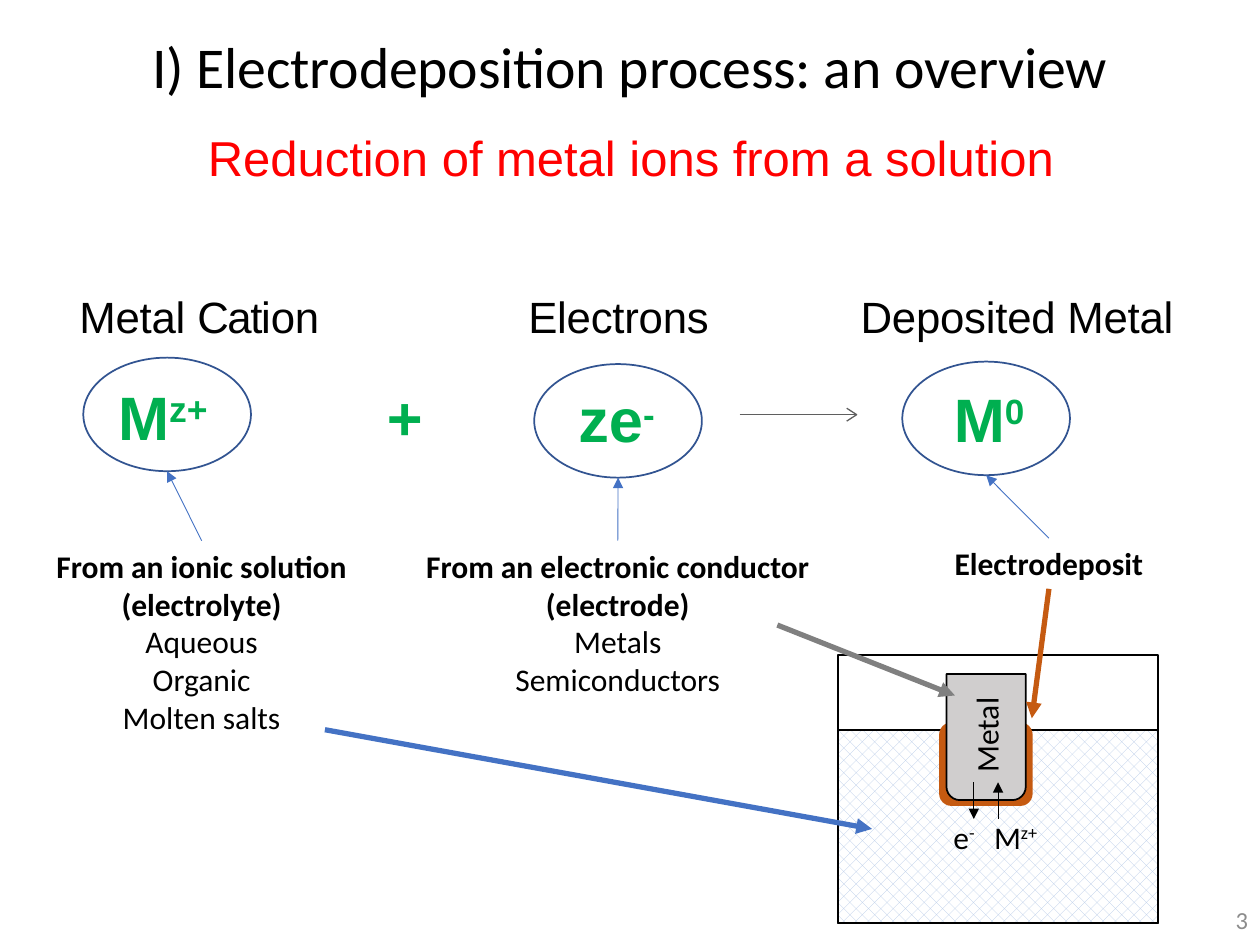
from lxml import etree
from pptx import Presentation
from pptx import util as u
from pptx.dml.color import RGBColor
from pptx.enum import dml, shapes, text
from pptx.oxml.ns import qn

BLACK, GREEN, BLUE, RUST = "000000", "00AF50", "4472C4", "C55A11"
MID = text.MSO_ANCHOR.MIDDLE
LEFT, CENTER, RIGHT = text.PP_ALIGN.LEFT, text.PP_ALIGN.CENTER, text.PP_ALIGN.RIGHT
KIND = shapes.MSO_SHAPE
FLUSH = dict(margin_left=0, margin_right=0, margin_top=u.Cm(0.03), margin_bottom=0,
             auto_size=text.MSO_AUTO_SIZE.SHAPE_TO_FIT_TEXT)
GROW = dict(auto_size=text.MSO_AUTO_SIZE.SHAPE_TO_FIT_TEXT)
HEAD = dict(size=25, name="Arial")
BODY = dict(size=18, name="Calibri")
BOLD = dict(BODY, bold=True)
ION = dict(size=35, name="Arial", color=GREEN, bold=True)


def paint(fmt, color):
    fmt.rgb = RGBColor.from_string(color)


def put(obj, vals):
    for key, val in vals.items():
        setattr(obj, key, val)


def add_run(para, words, size, name, color=BLACK, bold=False, base=0, spc=0):
    run = para.add_run()
    run.text = words
    put(run.font, dict(size=u.Pt(size), name=name, bold=bold))
    paint(run.font.color, color)
    props = run.font._element
    for key, val in (("baseline", base * 1000), ("spc", round(spc * 100))):
        if val:
            props.set(key, str(val))


def fill_para(para, runs, align=LEFT, gap=0, indent=0, tab=None):
    put(para, dict(alignment=align, space_before=u.Pt(gap)))
    props = para._p.get_or_add_pPr()
    props.set("marL", str(u.Cm(indent)))
    if tab:
        tabs = etree.SubElement(props, qn("a:tabLst"))
        etree.SubElement(tabs, qn("a:tab"), pos=str(u.Cm(tab)), algn="l")
    for words, style in runs:
        add_run(para, words, **style)


def add_text(slide, box, paras, frame=GROW, **fmt):
    shape = slide.shapes.add_textbox(*map(u.Cm, box))
    body = shape.text_frame
    put(body, dict(frame, word_wrap=True))
    for i, runs in enumerate(paras):
        para = body.add_paragraph() if i else body.paragraphs[0]
        fill_para(para, runs, **fmt)
    return shape


def add_form(slide, kind, box, fill, line, adj=()):
    shape = slide.shapes.add_shape(kind, *map(u.Cm, box))
    shape.shadow.inherit = False
    for i, val in enumerate(adj):
        shape.adjustments[i] = val
    if fill:
        shape.fill.solid()
        paint(shape.fill.fore_color, fill)
    else:
        shape.fill.background()
    paint(shape.line.color, line)
    shape.line.width = u.Pt(1)
    return shape


def add_arrow(slide, start, end, color, width, source=None, site=0):
    arrow = slide.shapes.add_connector(shapes.MSO_CONNECTOR.STRAIGHT, *map(u.Cm, start + end))
    if source is not None:
        arrow.begin_connect(source, site)
    paint(arrow.line.color, color)
    arrow.line.width = u.Pt(width)
    etree.SubElement(arrow.line._get_or_add_ln(), qn("a:tailEnd"), type="triangle")
    etree.SubElement(arrow._element.spPr, qn("a:effectLst"))


def add_yield(slide):
    left, mid, tip = u.Cm(14.91), u.Cm(8.36), u.Cm(17.27)
    back, half = u.Cm(0.2), u.Cm(0.13)
    pen = slide.shapes.build_freeform(left, mid)
    pen.add_line_segments([(tip, mid)], close=False)
    pen.move_to(tip - back, mid - half)
    pen.add_line_segments([(tip, mid), (tip - back, mid + half)], close=False)
    shape = pen.convert_to_shape()
    shape.shadow.inherit = False
    shape.fill.background()
    paint(shape.line.color, "5F5F5F")
    shape.line.width = u.Pt(0.75)


def add_titles(slide):
    title = dict(size=33, name="Calibri", spc=-0.1)
    red = dict(size=28, name="Arial", color="FF0000")
    add_text(slide, (2.54, 0.58, 20.32, 1.45),
             [[("I) Electrodeposition process: an overview", title)]],
             dict(FLUSH, vertical_anchor=MID), align=CENTER, gap=1)
    add_text(slide, (3.61, 2.54, 18.21, 1.22),
             [[("Reduction of metal ions from a solution", red)]],
             FLUSH, align=CENTER, gap=0.9)
    add_text(slide, (19.69, 18.03, 5.72, 1.02),
             [[("3", dict(size=14, name="Calibri", color="8C8C8C"))]],
             dict(vertical_anchor=MID), align=RIGHT)


def add_terms(slide):
    cation = add_text(slide, (1.57, 5.28, 7.04, 3.89), [[
        ("Metal ", dict(HEAD, spc=-0.1)), ("Cati", dict(HEAD, spc=-0.8)),
        ("on", dict(HEAD, spc=-0.1))]],
        dict(FLUSH, margin_top=u.Cm(0.56)), gap=16.1, indent=0.03)
    fill_para(cation.text_frame.add_paragraph(),
              [("M", ION), ("z+", dict(ION, base=30)), ("\t+", ION)],
              gap=21.3, indent=0.81, tab=6.27)
    for left, wide, words in ((10.62, 3.76, "Electrons"), (17.32, 6.43, "Deposited Metal")):
        add_text(slide, (left, 5.82, wide, 1.12), [[(words, dict(HEAD, spc=-0.1))]],
                 FLUSH, gap=0.9, indent=0.03)
    for left, wide, main_sym, high, base in ((11.56, 1.93, "ze", "-", 25),
                                             (19.13, 1.7, "M", "0", 30)):
        add_text(slide, (left, 7.65, wide, 1.55),
                 [[(main_sym, ION), (high, dict(ION, size=34.5, base=base))]],
                 FLUSH, gap=1.1, indent=0.1)
    add_yield(slide)


def add_notes(slide):
    wide, high = 3.38, 2.29
    rows = (
        ((1.68, 7.21), (0.84, 10.9, 6.45, 4.11), "From an ionic solution (electrolyte)",
         ("Aqueous", "Organic", "Molten salts")),
        ((10.77, 7.34), (8.2, 10.9, 8.51, 3.33), "From an electronic conductor (electrode)",
         ("Metals", "Semiconductors")),
        ((18.19, 7.29), (16.89, 10.85, 8.51, 1.02), "Electrodeposit", ()),
    )
    for (left, top), box, lead, items in rows:
        add_form(slide, KIND.OVAL, (left, top, wide, high), None, "325491")
        paras = [[(lead, BOLD)]] + [[(item, BODY)] for item in items]
        note = add_text(slide, box, paras, align=CENTER)
        add_arrow(slide, (box[0] + box[2] / 2, box[1]), (left + wide / 2, top + high),
                  BLUE, 0.5, note)
    return note


def add_cell(slide):
    left, wide = 16.89, 6.45
    add_form(slide, KIND.RECTANGLE, (left, 13.21, wide, 5.41), "FFFFFF", BLACK)
    bath = add_form(slide, KIND.RECTANGLE, (left, 14.71, wide, 3.89), None, BLACK)
    bath.fill.patterned()
    bath.fill.pattern = dml.MSO_PATTERN.PERCENT_30
    paint(bath.fill.fore_color, "B4C7E7")
    paint(bath.fill.back_color, "FFFFFF")
    add_form(slide, KIND.ROUNDED_RECTANGLE, (18.95, 14.58, 1.85, 1.65), RUST, RUST, [0.14])
    metal = add_form(slide, KIND.ROUND_2_SAME_RECTANGLE, (19.08, 13.59, 1.6, 2.54),
                     "D0CECE", BLACK, [0, 0.17])
    body = metal.text_frame
    body.vertical_anchor = MID
    body._txBody.bodyPr.set("vert", "vert270")
    fill_para(body.paragraphs[0], [("Metal", BODY)], align=CENTER)
    high, low = 15.77, 16.51
    add_arrow(slide, (19.63, high), (19.63, low), BLACK, 0.5)
    add_arrow(slide, (20.12, low), (20.12, high), BLACK, 0.5)
    for left, wide, sym, sup in ((18.97, 1.07, "e", "-"), (19.79, 1.6, "M", "z+")):
        add_text(slide, (left, 16.36, wide, 1.02), [[(sym, BODY), (sup, dict(BODY, base=30))]])


def main():
    deck = Presentation()
    put(deck, dict(slide_width=u.Cm(25.4), slide_height=u.Cm(19.05)))
    slide = deck.slides.add_slide(deck.slide_layouts[6])
    add_terms(slide)
    deposit = add_notes(slide)
    add_titles(slide)
    add_cell(slide)
    add_arrow(slide, (6.55, 14.71), (17.58, 16.71), BLUE, 3)
    add_arrow(slide, (15.67, 12.6), (19.25, 14.02), "808080", 3)
    add_arrow(slide, (21.13, 11.86), (20.8, 14.48), RUST, 3, deposit, 2)
    deck.save("out.pptx")


if __name__ == "__main__":
    main()
